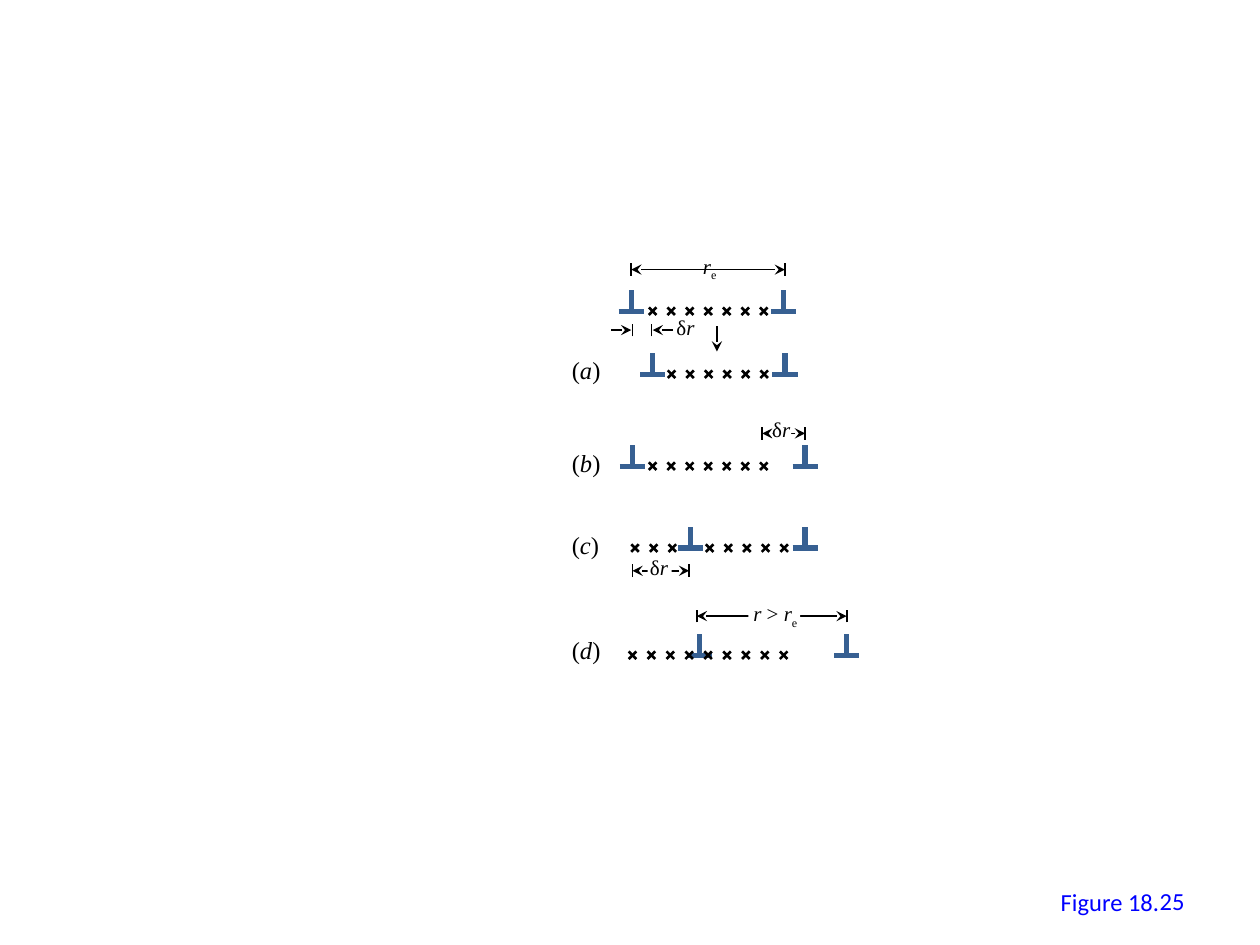
import pptx
import pptx.util
import pptx.dml.color
import pptx.enum.shapes
import pptx.enum.text
import pptx.oxml.ns
import lxml.etree
from dataclasses import dataclass

Inches = pptx.util.Inches


@dataclass(frozen=True)
class Theme:
    ink: str = "000000"
    steel: str = "376092"
    blue: str = "0000FF"
    paper: str = "FFFFFF"
    serif: str = "Times New Roman"
    sans: str = "Calibri"
    big: int = 14
    small: int = 12
    thin: float = 1
    mid: float = 1.5
    thick: float = 3


theme = Theme()

rows = [
    {"y": 2.47, "marks": [5.01, 6.22], "start": 5.18, "step": 0.147, "count": 7},
    {"y": 2.97, "marks": [5.18, 6.23], "start": 5.33, "step": 0.147, "count": 6},
    {"y": 3.7, "marks": [5.02, 6.39], "start": 5.18, "step": 0.147, "count": 7},
    {"y": 4.35, "marks": [5.48, 6.39], "start": 5.04, "step": 0.148, "count": 9, "skip": 3},
    {"y": 5.2, "marks": [5.55, 6.72], "start": 5.02, "step": 0.15, "count": 9},
]

spans = [
    {"y": 2.14, "ends": (5.01, 6.23)},
    {"y": 3.44, "ends": (6.05, 6.39), "mask": (6.13, 3.39, 0.15, 0.16)},
    {"y": 4.53, "ends": (5.02, 5.47), "mask": (5.14, 4.46, 0.19, 0.15)},
    {"y": 4.89, "ends": (5.53, 6.72), "mask": (5.94, 4.82, 0.41, 0.15)},
]

arrows = [
    ((4.85, 2.62), (5.01, 2.62)),
    ((5.34, 2.62), (5.18, 2.62)),
    ((5.69, 2.59), (5.69, 2.79)),
]
stops = [(5.02, 2.62), (5.17, 2.62)]

delta = [("δ", ""), ("r", "i")]
radius = [("r", "i"), ("e", "sub")]
notes = [
    ((5.48, 1.96, 0.36, 0.3), radius),
    ((5.27, 2.45, 0.39, 0.3), delta),
    ((6.03, 3.26, 0.39, 0.3), delta),
    ((5.06, 4.35, 0.39, 0.3), delta),
    ((5.88, 4.72, 0.59, 0.3), [("r", "i"), (" > ", "")] + radius),
]
parts = [("a", 2.77), ("b", 3.51), ("c", 4.16), ("d", 4.99)]


def tint(code):
    return pptx.dml.color.RGBColor.from_string(code)


def line(shapes, start, end, color, width, heads=()):
    kind = pptx.enum.shapes.MSO_CONNECTOR.STRAIGHT
    item = shapes.add_connector(kind, *map(Inches, start + end))
    item.line.color.rgb = tint(color)
    item.line.width = pptx.util.Pt(width)
    qn = pptx.oxml.ns.qn
    for head in heads:
        tip = lxml.etree.SubElement(item.line._get_or_add_ln(), qn("a:" + head))
        tip.set("type", "stealth")
    lxml.etree.SubElement(item._element.spPr, qn("a:effectLst"))


def cross(shapes, x, y):
    group = shapes.add_group_shape().shapes
    arm = 0.03
    for rise in (arm, -arm):
        line(group, (x - arm, y - rise), (x + arm, y + rise), theme.ink, theme.mid)


def edge(shapes, x, y):
    group = shapes.add_group_shape().shapes
    line(group, (x - 0.1, y), (x + 0.1, y), theme.steel, theme.thick)
    line(group, (x, y), (x, y - 0.17), theme.steel, theme.thick)


def stop(shapes, x, y):
    line(shapes, (x, y + 0.05), (x, y - 0.05), theme.ink, theme.thin)


def span(shapes, y, ends, mask=None):
    left, right = ends
    line(shapes, (right, y), (left, y), theme.ink, theme.thin, ("headEnd", "tailEnd"))
    for x in ends:
        stop(shapes, x, y)
    if mask:
        kind = pptx.enum.shapes.MSO_SHAPE.RECTANGLE
        box = shapes.add_shape(kind, *map(Inches, mask))
        box.shadow.inherit = False
        box.fill.solid()
        box.fill.fore_color.rgb = tint(theme.paper)
        box.line.fill.background()


def text(shapes, place, runs, size, face=theme.serif, color=theme.ink, wrap=False):
    frame = shapes.add_textbox(*map(Inches, place)).text_frame
    frame.word_wrap = wrap
    if not wrap:
        frame.auto_size = pptx.enum.text.MSO_AUTO_SIZE.SHAPE_TO_FIT_TEXT
    para = frame.paragraphs[0]
    para.font.name = face
    para.font.size = pptx.util.Pt(size)
    para.font.color.rgb = tint(color)
    for word, style in runs:
        run = para.add_run()
        run.text = word
        if style == "i":
            run.font.italic = True
        elif style == "sub":
            run._r.get_or_add_rPr().set("baseline", "-25000")
    return frame


def main():
    deck = pptx.Presentation()
    deck.slide_width, deck.slide_height = Inches(10), Inches(7.5)
    shapes = deck.slides.add_slide(deck.slide_layouts[6]).shapes

    for row in rows:
        for x in row["marks"]:
            edge(shapes, x, row["y"])
        for n in range(row["count"]):
            if n != row.get("skip"):
                cross(shapes, row["start"] + n * row["step"], row["y"])
    for item in spans:
        span(shapes, **item)
    for start, end in arrows:
        line(shapes, start, end, theme.ink, theme.thin, ("tailEnd",))
    for x, y in stops:
        stop(shapes, x, y)
    for place, runs in notes:
        text(shapes, place, runs, theme.small)
    for name, top in parts:
        runs = [("(", ""), (name, "i"), (")", "")]
        text(shapes, (4.44, top, 0.43, 0.34), runs, theme.big)

    text(shapes, (8.32, 6.99, 0.99, 0.34), [("Figure 18.", "")],
         theme.big, theme.sans, theme.blue)
    page = text(shapes, (7.17, 6.95, 2.33, 0.4), [("25", "")],
                theme.big, theme.sans, theme.blue, True)
    page.vertical_anchor = pptx.enum.text.MSO_ANCHOR.MIDDLE
    page.paragraphs[0].alignment = pptx.enum.text.PP_ALIGN.RIGHT
    deck.save("out.pptx")


if __name__ == "__main__":
    main()
